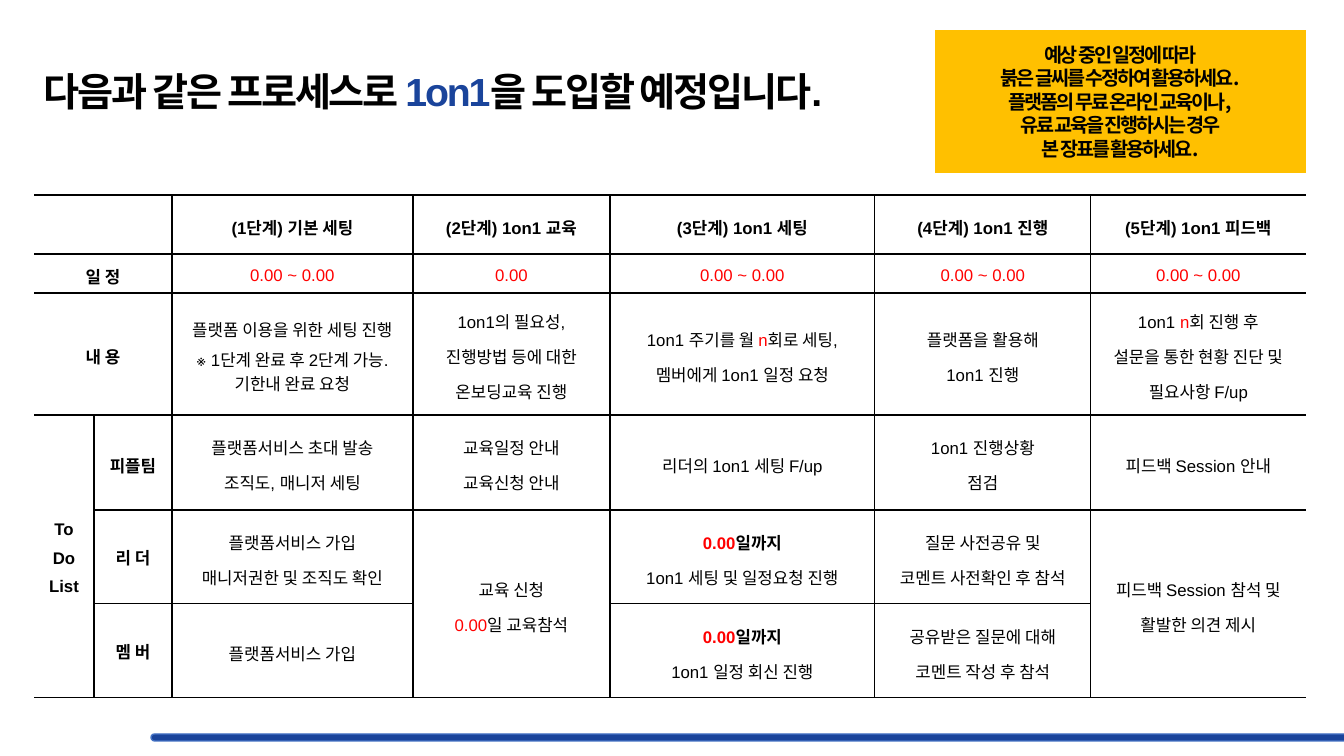
from lxml.etree import SubElement
from pptx import Presentation
from pptx.dml.color import RGBColor
from pptx.enum.shapes import MSO_SHAPE
from pptx.enum.text import MSO_ANCHOR, MSO_AUTO_SIZE, PP_ALIGN
from pptx.oxml.ns import qn
from pptx.util import Emu, Pt

# Content: a new line starts a paragraph, |bars| hold accented words, a leading * is bold
TITLE = "다음과 같은 프로세스로 |1on1|을 도입할 예정입니다."
NOTICE = """예상 중인 일정에 따라
붉은 글씨를 수정하여 활용하세요.
플랫폼의 무료 온라인 교육이나,
유료 교육을 진행하시는 경우
본 장표를 활용하세요."""
RANGE = "|0.00 ~ 0.00|"
PROCESS = [
    ["", "", "*(1단계) 기본 세팅", "*(2단계) 1on1 교육", "*(3단계) 1on1 세팅",
     "*(4단계) 1on1 진행", "*(5단계) 1on1 피드백"],
    ["*일 정", "", RANGE, "|0.00|", RANGE, RANGE, RANGE],
    ["*내 용", "",
     "플랫폼 이용을 위한 세팅 진행\n※ 1단계 완료 후 2단계 가능. 기한내 완료 요청",
     "1on1의 필요성,\n진행방법 등에 대한\n온보딩교육 진행",
     "1on1 주기를 월 |n|회로 세팅,\n멤버에게 1on1 일정 요청",
     "플랫폼을 활용해\n1on1 진행",
     "1on1 |n|회 진행 후\n설문을 통한 현황 진단 및\n필요사항 F/up"],
    ["*To\n*Do\n*List", "*피플팀",
     "플랫폼서비스 초대 발송\n조직도, 매니저 세팅",
     "교육일정 안내\n교육신청 안내",
     "리더의 1on1 세팅 F/up",
     "1on1 진행상황\n점검",
     "피드백 Session 안내"],
    ["", "*리 더",
     "플랫폼서비스 가입\n매니저권한 및 조직도 확인",
     "교육 신청\n|0.00|일 교육참석",
     "*|0.00|일까지\n1on1 세팅 및 일정요청 진행",
     "질문 사전공유 및\n코멘트 사전확인 후 참석",
     "피드백 Session 참석 및\n활발한 의견 제시"],
    ["", "*멤 버", "플랫폼서비스 가입", "",
     "*|0.00|일까지\n1on1 일정 회신 진행",
     "공유받은 질문에 대해\n코멘트 작성 후 참석", ""],
]
COLUMNS = [60, 78, 241, 197, 265, 216, 215]
ROWS = [59, 39, 122, 95, 94, 94]
MERGES = [((0, 0), (0, 1)), ((1, 0), (1, 1)), ((2, 0), (2, 1)),
          ((3, 0), (5, 0)), ((4, 3), (5, 3)), ((4, 6), (5, 6))]

THEME = {
    "ink": "000000", "blue": "1A449B", "bar_line": "4472C4",
    "red": "FF0000", "yellow": "FFC000",
    "latin": "Arial", "korean": "Noto Sans CJK KR",
    "title": 28, "notice": 14, "cell": 12,
}
PAGE_WIDTH, PAGE_HEIGHT = 1344, 756
SCALE = 12192000 / PAGE_WIDTH


def px(length):
    return Emu(round(length * SCALE))


def color(name):
    return RGBColor.from_string(THEME[name])


def write(frame, text, *, size, accent="red", font="latin", bold=False,
          tracking=0, align=PP_ALIGN.CENTER, spacing=1.0, after=0):
    """Fill a text frame from marked-up lines."""
    for index, line in enumerate(text.split("\n")):
        para = frame.add_paragraph() if index else frame.paragraphs[0]
        para.alignment = align
        # The remark under a line is set tight
        para.line_spacing = 1.0 if line.startswith("※") else spacing
        para.space_after = Pt(after)
        strong = bold or line.startswith("*")
        for part, words in enumerate(line.removeprefix("*").split("|")):
            if not words:
                continue
            span = para.add_run()
            span.text = words
            span.font.size = Pt(THEME[size])
            span.font.bold = strong
            span.font.color.rgb = color(accent if part % 2 else "ink")
            span.font.name = THEME[font]
            properties = span._r.get_or_add_rPr()
            SubElement(properties, qn("a:ea"), typeface=THEME["korean"])
            if tracking:
                properties.set("spc", str(round(tracking * 100)))


def rule_cell(cell, sides):
    """Draw 1 pt rules on the given sides and clear the others."""
    properties = cell._tc.get_or_add_tcPr()
    for side in "LRTB":
        line = SubElement(properties, qn(f"a:ln{side}"), w=str(Pt(1)))
        if side in sides:
            fill = SubElement(line, qn("a:solidFill"))
            SubElement(fill, qn("a:srgbClr"), val=THEME["ink"])
        else:
            SubElement(line, qn("a:noFill"))
    cell.fill.background()


def add_block(page, kind, place, fill):
    block = page.shapes.add_shape(kind, *map(px, place))
    block.shadow.inherit = False
    block.fill.solid()
    block.fill.fore_color.rgb = color(fill)
    return block


def add_process_table(page):
    frame = page.shapes.add_table(len(ROWS), len(COLUMNS), px(34), px(195),
                                  px(sum(COLUMNS)), px(sum(ROWS)))
    table = frame.table
    table.first_row = table.horz_banding = False
    for column, width in zip(table.columns, COLUMNS):
        column.width = px(width)
    for row, height in zip(table.rows, ROWS):
        row.height = px(height)
    last = len(COLUMNS) - 1
    for r, texts in enumerate(PROCESS):
        for c, text in enumerate(texts):
            cell = table.cell(r, c)
            cell.vertical_anchor = MSO_ANCHOR.MIDDLE
            cell.margin_top = cell.margin_bottom = px(2)
            cell.margin_left = cell.margin_right = px(7)
            rule_cell(cell, "TB" + "L" * (c > 0) + "R" * (c < last))
            if text:
                plain = c == 1 and r > 3
                write(cell.text_frame, text, size="cell",
                      spacing=1.0 if plain else 1.2, after=0 if plain else 4.2)
    for start, end in MERGES:
        table.cell(*start).merge(table.cell(*end))


def main():
    deck = Presentation()
    deck.slide_width, deck.slide_height = px(PAGE_WIDTH), px(PAGE_HEIGHT)
    page = deck.slides.add_slide(deck.slide_layouts[6])

    # Bottom bar, running off the right edge
    bar = add_block(page, MSO_SHAPE.ROUNDED_RECTANGLE, (151, 734, 1209, 7), "blue")
    bar.adjustments[0] = 0.5
    bar.line.color.rgb = color("bar_line")
    bar.line.width = Pt(1)

    # Title
    title = page.shapes.add_textbox(*map(px, (34, 62, 1019, 57))).text_frame
    title.word_wrap = True
    title.auto_size = MSO_AUTO_SIZE.SHAPE_TO_FIT_TEXT
    write(title, TITLE, size="title", accent="blue", bold=True, tracking=-1.5,
          align=PP_ALIGN.LEFT, spacing=Pt(33.6))

    add_process_table(page)

    # Yellow notice
    notice = add_block(page, MSO_SHAPE.RECTANGLE, (935, 30, 371, 143), "yellow")
    notice.line.fill.background()
    notice.text_frame.word_wrap = True
    notice.text_frame.vertical_anchor = MSO_ANCHOR.MIDDLE
    write(notice.text_frame, NOTICE, size="notice", font="korean", bold=True,
          tracking=-1.5, spacing=Pt(16.8))

    deck.save("out.pptx")


if __name__ == "__main__":
    main()
